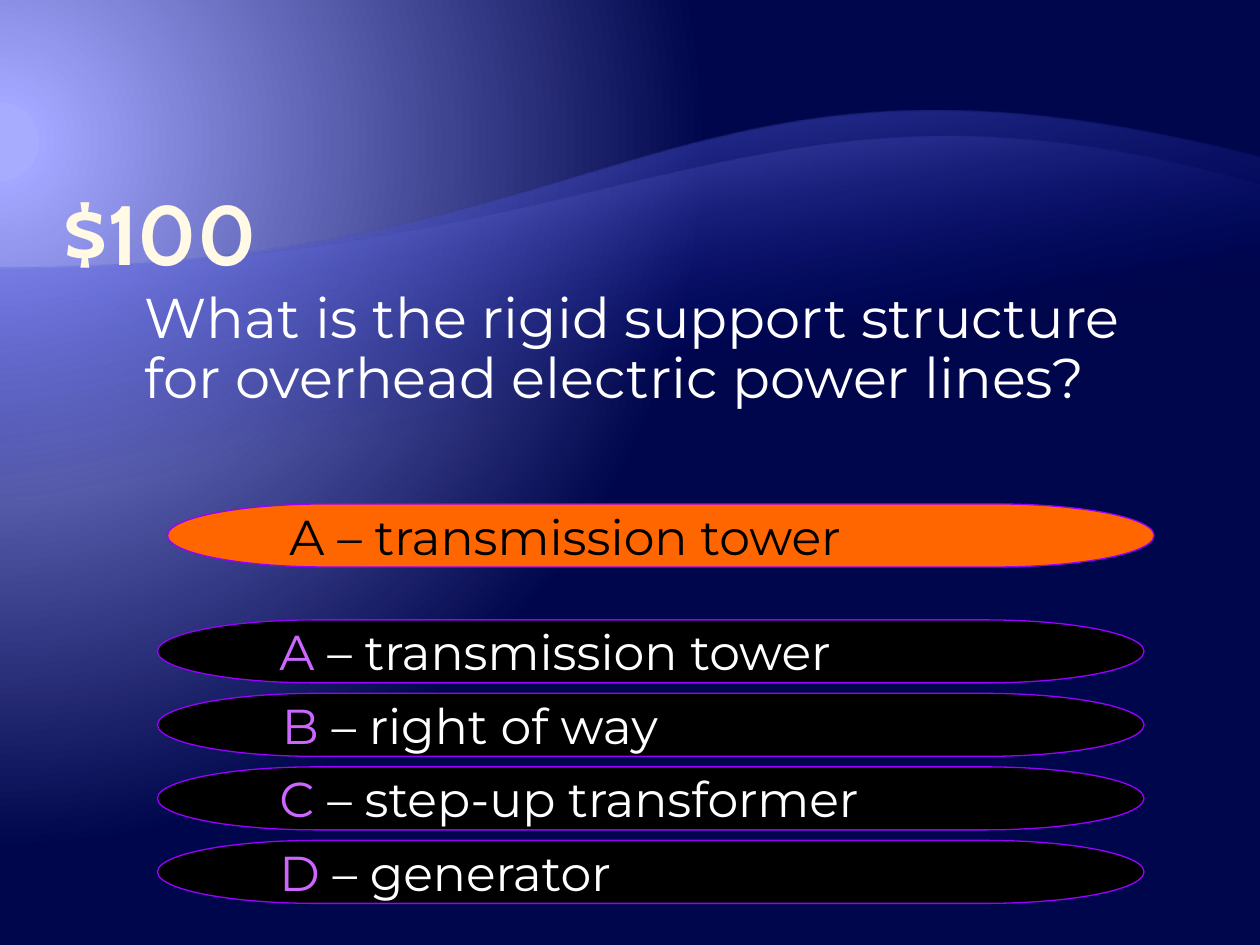
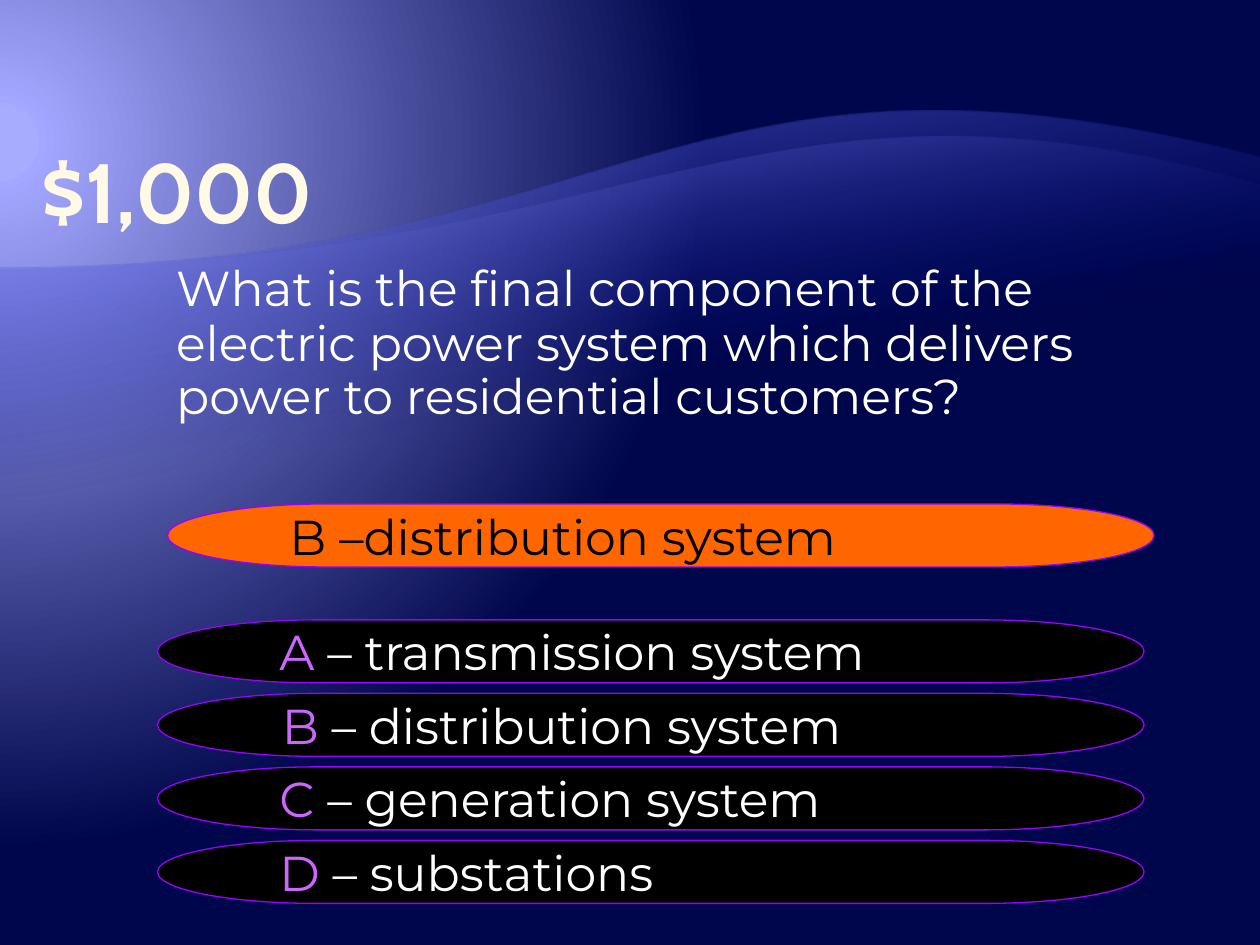
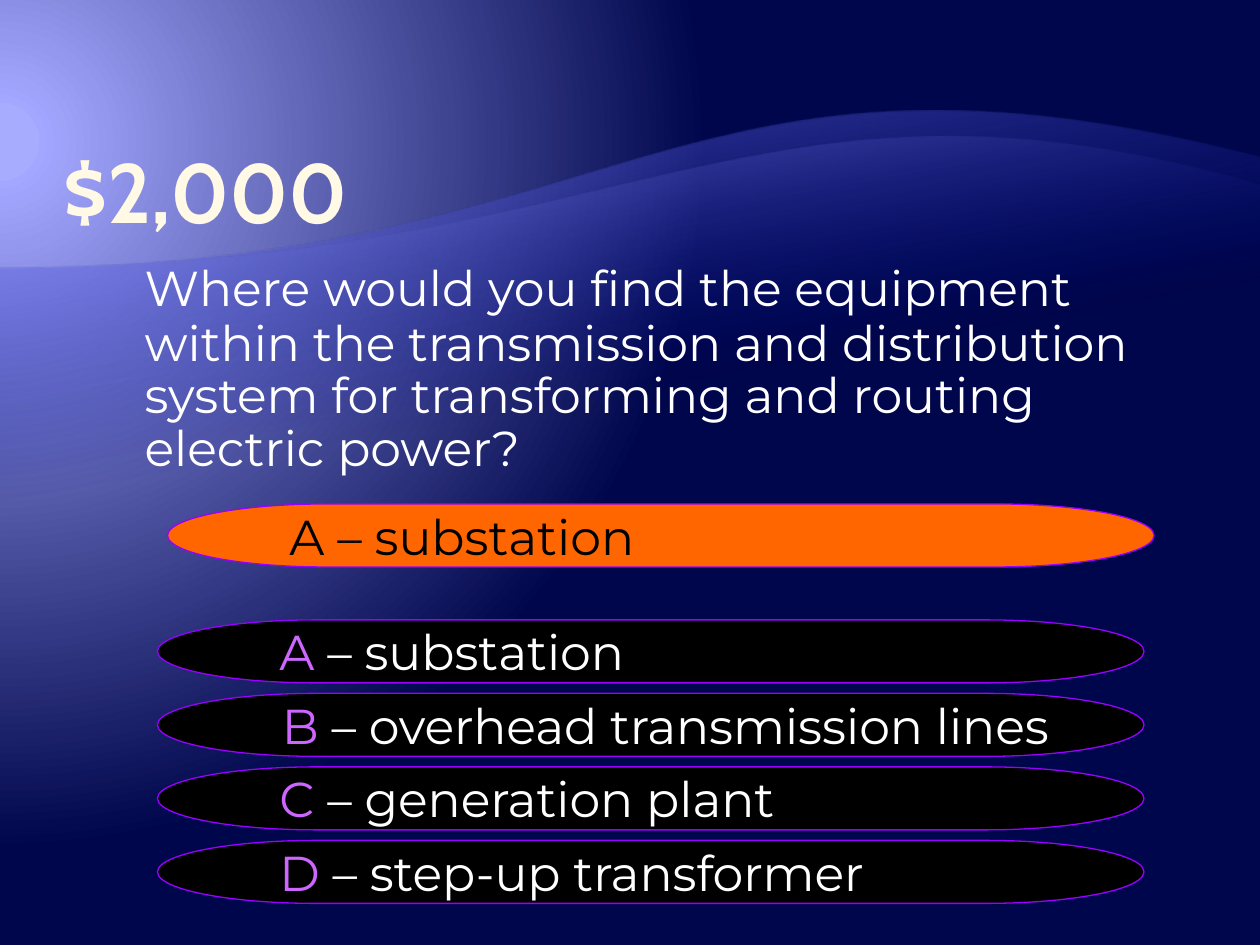
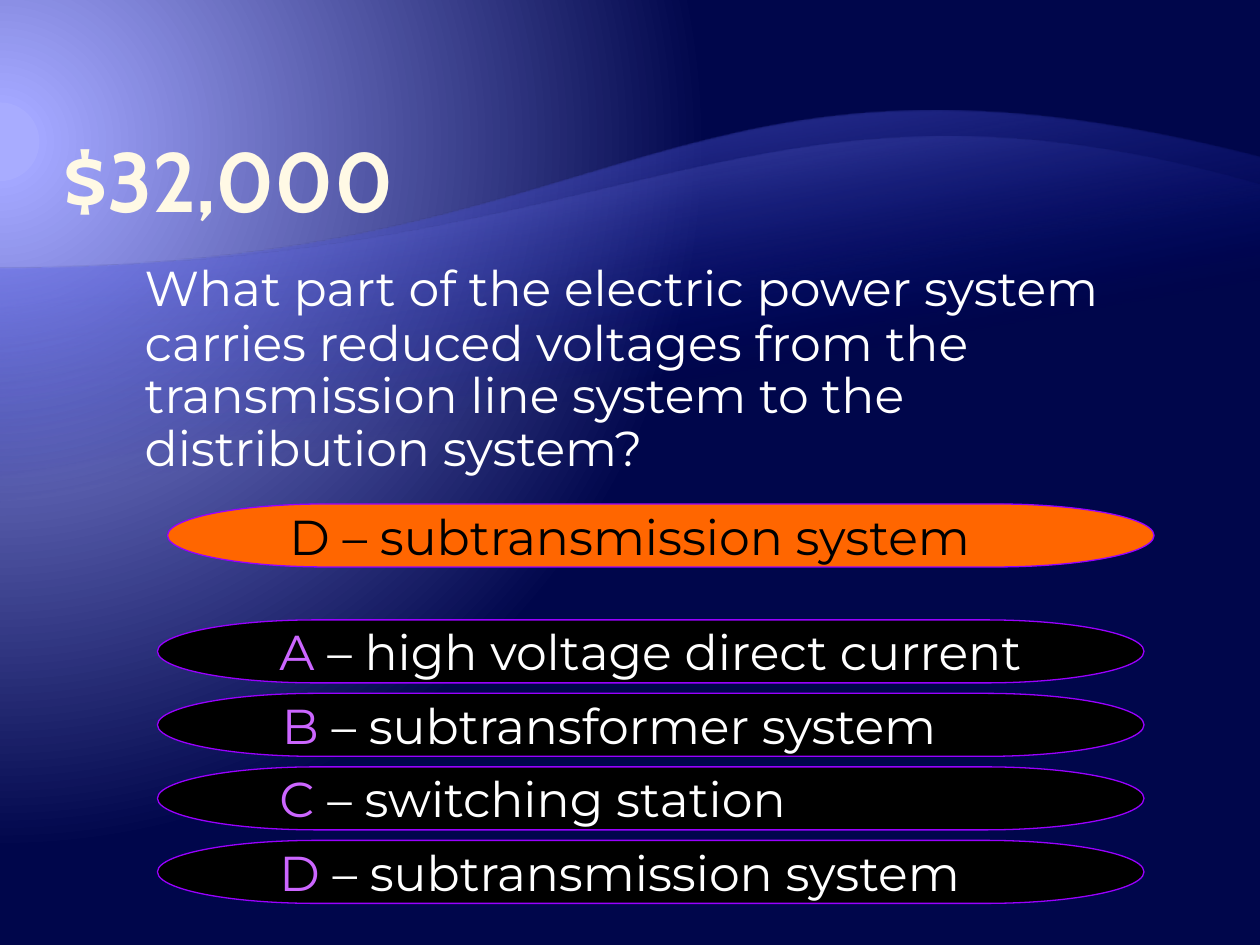
from pptx import Presentation
from pptx.dml.color import RGBColor
from pptx.enum.shapes import MSO_SHAPE
from pptx.enum.text import MSO_ANCHOR, MSO_AUTO_SIZE, PP_ALIGN
from pptx.oxml import parse_xml
from pptx.oxml.ns import nsdecls, qn
from pptx.util import Inches, Pt

TERMINATOR = MSO_SHAPE.FLOWCHART_TERMINATOR
MIDDLE, BOTTOM = MSO_ANCHOR.MIDDLE, MSO_ANCHOR.BOTTOM
LEFT, NO_FIT = PP_ALIGN.LEFT, MSO_AUTO_SIZE.NONE

# Content: boxes are left, top, width, height in inches
QUESTIONS = [
    dict(prize="$100", title_box=(0.5, 1, 9, 1.25),
         question="What is the rigid support structure for overhead electric power lines?",
         size=32, question_box=(0.67, 2.25, 8.5, 1.67),
         options=["transmission tower", "right of way", "step-up transformer", "generator"],
         answer="A – transmission tower"),
    dict(prize="$1,000", title_box=(0.33, 0.67, 6.83, 1.25),
         question="What is the final component of the electric power system which "
                  "delivers power to residential customers?",
         size=28, question_box=(0.92, 2, 8.5, 1.92),
         options=["transmission system", "distribution system", "generation system",
                  "substations"],
         answer="B –distribution system"),
    dict(prize="$2,000", title_box=(0.5, 0.67, 9, 1.25),
         question="Where would you find the equipment within the transmission and "
                  "distribution system for transforming and routing electric power?",
         size=28, question_box=(0.67, 2, 8.5, 1.83),
         options=["substation", "overhead transmission lines", "generation plant",
                  "step-up transformer"],
         answer="A – substation"),
    dict(prize="$32,000", title_box=(0.5, 0.58, 9, 1.25),
         question="What part of the electric power system carries reduced voltages from "
                  "the transmission line system to the distribution system?",
         size=28, question_box=(0.67, 2, 8.5, 1.17),
         options=["high voltage direct current", "subtransformer system",
                  "switching station", "subtransmission system"],
         answer="D – subtransmission system"),
]


class Theme:
    title_font, body_font = "Cabin", "Montserrat"
    title_size, tab_size, bar_size = 48, 32, 28
    title, title_outline = "FFF9E5", "8F8462"
    white, black = "FFFFFF", "000000"
    letter, bar_line, answer = "CC66FF", "9900FF", "FF6600"
    # Gradient stops: position %, colour, opacity %
    background = [(5, "A8ACFF", 100), (5, "A3A7FF", 100), (90, "00064B", 100)]
    glow = ('<a:path path="circle"><a:fillToRect l="20000" t="30000" '
            'r="135000" b="100000"/></a:path>')
    slope = f'<a:lin ang="{80 * 60000}" scaled="0"/>'


# Waves: a curve from the left edge to the right one, closed along the bottom
WAVES = [
    dict(bottom=7.33, start=2.13, controls=[(5, 2.13), (5.34, 0.05)], end=1.25,
         stops=[(65, "000D9E", 0), (100, "797FFF", 55)]),
    dict(bottom=6.37, start=2.13, controls=[(5, 2.13), (5.98, 0.31)], end=1.47,
         stops=[(65, "000D9E", 0), (100, "A3A7FF", 30)]),
]

# Layout
SLIDE_W, SLIDE_H = 10, 7.5
BAR_W, BAR_H = 7.83, 0.5
BAR_LEFT, BAR_TOP, BAR_PITCH = 1.25, 4.92, 1.75 / 3
ANSWER_LEFT, ANSWER_TOP = 1.33, 4
HANGING = 0.38


def inches(values):
    return [Inches(v) for v in values]


def rgb(color):
    return RGBColor.from_string(color)


def set_all(target, **values):
    for name, value in values.items():
        setattr(target, name, value)


def set_gradient(owner, fill, stops, shade):
    fill.background()
    old = next(owner.iter(qn("a:noFill")))
    gs = "".join(f'<a:gs pos="{pos * 1000}"><a:srgbClr val="{color}">'
                 f'<a:alpha val="{alpha * 1000}"/></a:srgbClr></a:gs>'
                 for pos, color, alpha in stops)
    old.getparent().replace(old, parse_xml(
        f'<a:gradFill {nsdecls("a")} rotWithShape="1"><a:gsLst>{gs}</a:gsLst>'
        f'{shade}</a:gradFill>'))


def add_run(p, text, size, color, font=Theme.body_font, bold=False):
    r = p.add_run()
    r.text = text
    set_all(r.font, name=font, size=Pt(size), bold=bold)
    r.font.color.rgb = rgb(color)
    return r


def format_paragraph(p, margin, indent=0, space_before=True):
    pPr = p._p.get_or_add_pPr()
    pPr.set("marL", str(Inches(margin)))
    pPr.set("indent", str(Inches(indent)))
    if space_before:
        pPr.append(parse_xml(f'<a:spcBef {nsdecls("a")}><a:spcPct val="20000"/></a:spcBef>'))


def add_wave(slide, layout, n, wave):
    """Draw the wave turned by 180 degrees and move it to the layout."""
    def turn(x, y):
        return Inches(SLIDE_W - x), Inches(wave["end"] + wave["bottom"] - y)

    builder = slide.shapes.build_freeform(*turn(SLIDE_W, wave["bottom"]))
    builder.add_line_segments([turn(0, wave["bottom"]), turn(0, wave["start"]),
                               turn(SLIDE_W, wave["end"])])
    sp = builder.convert_to_shape()
    sp.rotation = 180
    sp.shadow.inherit = False
    set_gradient(sp._element, sp.fill, wave["stops"], Theme.slope)
    sp.line.fill.background()

    # The last straight segment becomes the curve
    top_edge = list(sp._element.iter(qn("a:lnTo")))[-1]
    curve = parse_xml(f'<a:cubicBezTo {nsdecls("a")}/>')
    for x, y in wave["controls"]:
        curve.append(parse_xml(f'<a:pt {nsdecls("a")} x="{Inches(SLIDE_W - x)}" '
                               f'y="{Inches(wave["bottom"] - y)}"/>'))
    curve.append(top_edge[0])
    top_edge.getparent().replace(top_edge, curve)

    sp._element.nvSpPr.cNvPr.set("id", str(20 + n))
    layout.shapes._spTree.insert(2 + n, sp._element)


def add_title(slide, text, box):
    title = slide.shapes.title
    set_all(title, **dict(zip(("left", "top", "width", "height"), inches(box))))
    tf = title.text_frame
    set_all(tf, vertical_anchor=BOTTOM, auto_size=NO_FIT, word_wrap=True,
            margin_left=0, margin_right=0,
            margin_top=Inches(0.01), margin_bottom=Inches(0.01))
    p = tf.paragraphs[0]
    p.alignment = LEFT
    r = add_run(p, text, Theme.title_size, Theme.title, Theme.title_font, True)
    r._r.get_or_add_rPr().insert(0, parse_xml(
        f'<a:ln {nsdecls("a")} w="{Pt(0.04)}"><a:solidFill>'
        f'<a:srgbClr val="{Theme.title_outline}"/></a:solidFill></a:ln>'))


def add_question(slide, text, size, box):
    tf = slide.shapes.add_textbox(*inches(box)).text_frame
    tf.word_wrap = True
    p = tf.paragraphs[0]
    p.line_spacing = 0.9
    format_paragraph(p, HANGING, -HANGING)
    add_run(p, "\t", Theme.tab_size, Theme.white)
    add_run(p, text, size, Theme.white)


def add_bar(slide, left, top, fill, runs, second=False):
    sp = slide.shapes.add_shape(TERMINATOR, *inches((left, top, BAR_W, BAR_H)))
    sp.shadow.inherit = False
    sp.fill.solid()
    sp.fill.fore_color.rgb = rgb(fill)
    sp.line.color.rgb = rgb(Theme.bar_line)
    sp.line.width = Pt(0.75)
    tf = sp.text_frame
    set_all(tf, vertical_anchor=MIDDLE, word_wrap=False)
    p = tf.paragraphs[0]
    set_all(p, alignment=LEFT, level=0 if second else 1)
    format_paragraph(p, 0.52 if second else 0.5, space_before=not second)
    for text, color in runs:
        add_run(p, text, Theme.bar_size, color)


def main():
    prs = Presentation()
    set_all(prs, slide_width=Inches(SLIDE_W), slide_height=Inches(SLIDE_H))
    master, layout = prs.slide_master, prs.slide_layouts[5]
    set_gradient(master._element, master.background.fill, Theme.background, Theme.glow)

    for q in QUESTIONS:
        slide = prs.slides.add_slide(layout)
        add_title(slide, q["prize"], q["title_box"])
        add_question(slide, q["question"], q["size"], q["question_box"])
        for i, (letter, option) in enumerate(zip("ABCD", q["options"])):
            add_bar(slide, BAR_LEFT, BAR_TOP + i * BAR_PITCH, Theme.black,
                    [(f"{letter} ", Theme.letter), (f"– {option}", Theme.white)],
                    second=letter == "B")
        add_bar(slide, ANSWER_LEFT, ANSWER_TOP, Theme.answer, [(q["answer"], Theme.black)])

    # Waves shared by all slides
    for n, wave in enumerate(WAVES):
        add_wave(prs.slides[0], layout, n, wave)
    prs.save("out.pptx")


if __name__ == "__main__":
    main()
